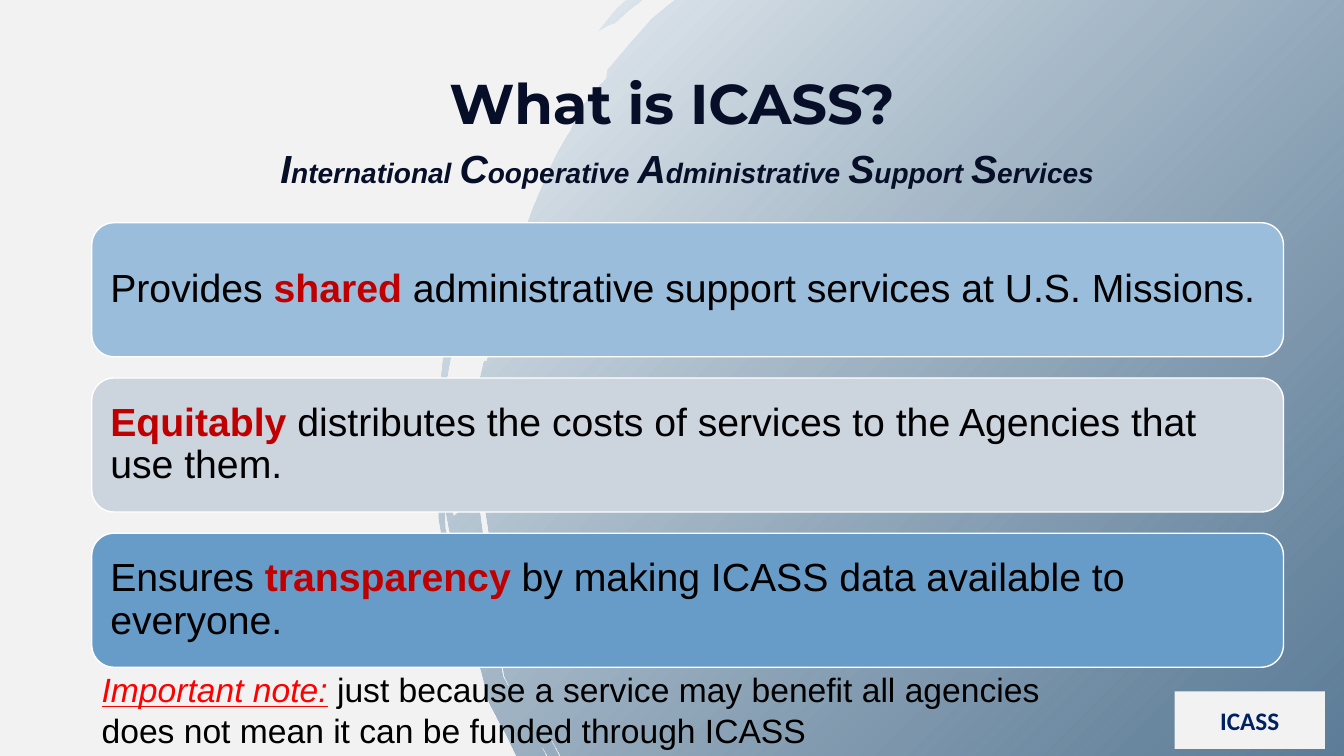
from dataclasses import dataclass
from typing import NamedTuple

from pptx import Presentation
from pptx.dml.color import RGBColor
from pptx.enum import shapes, text
from pptx.oxml import ns, parse_xml
from pptx.util import Inches, Pt


@dataclass(frozen=True)
class Theme:
    background: str = "F2F2F2"
    brush_light: str = "F2F7FA"
    brush_dark: str = "2C567A"
    heading: str = "060E28"
    body: str = "000000"
    emphasis: str = "C00000"
    warning: str = "FF0000"
    badge: str = "002060"
    outline: str = "FFFFFF"
    title_font: str = "Montserrat"
    body_font: str = "Arial"
    badge_font: str = "Calibri"
    title_size: int = 40
    body_size: int = 28
    note_size: int = 24
    small_size: int = 20
    badge_size: int = 18


class Box(NamedTuple):
    left: float
    top: float
    width: float
    height: float


@dataclass(frozen=True)
class Span:
    """Words in one look; None keeps the look of the paragraph."""
    words: str
    color: str | None = None
    size: int | None = None
    bold: bool | None = None
    italic: bool | None = None
    underline: bool | None = None


@dataclass(frozen=True)
class Style:
    font: str
    size: int
    color: str
    bold: bool = False
    italic: bool = False
    align: text.PP_ALIGN = text.PP_ALIGN.CENTER
    line_spacing: float = 1.0


@dataclass(frozen=True)
class Purpose:
    """One panel: a sentence whose key word is emphasised."""
    fill: str
    before: str
    key: str
    after: str

    def spans(self) -> list[Span]:
        parts = [Span(self.before), Span(self.key, THEME.emphasis, bold=True), Span(self.after)]
        return [part for part in parts if part.words]


THEME = Theme()
TITLE = Style(THEME.title_font, THEME.title_size, THEME.heading, bold=True)
SUBTITLE = Style(THEME.body_font, THEME.small_size, THEME.heading, bold=True, italic=True)
PURPOSE = Style(THEME.body_font, THEME.body_size, THEME.body,
                align=text.PP_ALIGN.LEFT, line_spacing=0.9)
NOTE = Style(THEME.body_font, THEME.note_size, THEME.body, align=text.PP_ALIGN.LEFT)
BADGE = Style(THEME.badge_font, THEME.badge_size, THEME.badge, bold=True)

SLIDE_WIDTH, SLIDE_HEIGHT = 13.33, 7.5
TITLE_BOX = Box(3.94, 0.63, 5.45, 0.77)
SUBTITLE_BOX = Box(1.96, 1.38, 9.71, 0.84)
FIRST_PANEL = Box(0.91, 2.21, 11.82, 1.33)
PANEL_GAP = 0.21
PANEL_INSET = 0.12
NOTE_BOX = Box(0.91, 6.59, 11.82, 0.91)
BADGE_BOX = Box(11.65, 6.86, 1.49, 0.57)

ACRONYM = ["International ", "Cooperative ", "Administrative ", "Support ", "Services"]
PURPOSES = [
    Purpose("9ABDDB", "Provides ", "shared ", "administrative support services at U.S. Missions."),
    Purpose("CCD4DE", "", "Equitably ",
            "distributes the costs of services to the Agencies that use them."),
    Purpose("679CC8", "Ensures ", "transparency ", "by making ICASS data available to everyone."),
]
NOTE_LINES = [
    [Span("Important note:", THEME.warning, italic=True, underline=True),
     Span(" just because a service may benefit all agencies")],
    [Span("does not mean it can be funded through ICASS")],
]

# The ragged left edge of the brush stroke, from the top of the slide to the bottom
Points = list[tuple[float, float]]
UPPER_SWEEP: Points = [
    (6.69, 0), (6.46, 0.19), (6.24, 0.44), (6.02, 0.7), (6.01, 0.78), (5.87, 0.93),
    (5.73, 1.12), (5.65, 1.31), (5.53, 1.51), (5.43, 1.72), (5.33, 1.95), (5.15, 2.43),
    (5.04, 2.8), (4.91, 3.3), (4.86, 3.66), (4.91, 3.23), (4.83, 3.58), (4.8, 3.58),
    (4.71, 3.97), (4.59, 4.17), (4.58, 4.32), (4.62, 4.65), (4.64, 4.99), (4.5, 5.12),
]
OUTER_BRISTLES: Points = [
    (4.46, 4.6), (4.47, 4), (4.43, 3.85), (4.39, 4.13), (4.42, 5.07), (4.52, 5.6),
    (4.51, 5.63), (4.42, 5.24), (4.38, 4.12), (4.42, 3.85), (4.51, 3.36), (4.69, 2.66),
    (4.86, 2.2), (4.79, 2.31), (4.61, 2.66), (4.5, 2.91), (4.42, 3.33), (4.37, 3.77),
    (4.3, 4.4), (4.35, 4.79), (4.35, 5.14), (4.46, 5.82), (4.56, 6.01), (4.53, 5.75),
    (4.58, 6.02), (4.68, 6.4), (4.77, 6.65), (4.85, 6.97), (5.03, 7.31), (5.12, 7.5),
]
LOWER_SWEEP: Points = [
    (5.42, 7.5), (5.24, 7.16), (4.99, 6.71), (4.93, 6.37), (4.8, 5.99), (4.7, 5.46),
    (4.68, 5.21), (4.82, 6), (4.95, 6.38), (5, 6.71), (5.24, 7.16), (5.43, 7.5),
    (5.55, 7.5), (5.17, 6.78), (4.93, 5.99), (4.82, 5.51), (4.73, 4.83), (4.75, 4.65),
    (4.85, 5.3), (4.97, 5.92), (4.87, 5.71), (4.79, 5.29), (4.94, 5.99), (5.17, 6.78),
    (5.56, 7.5),
]
RIGHT_SIDE: Points = [(SLIDE_WIDTH, SLIDE_HEIGHT), (SLIDE_WIDTH, 0)]
STRAY_BRISTLE: Points = [
    (6.38, 0), (6.21, 0), (6.12, 0.08), (6.02, 0.2), (5.92, 0.33), (6.04, 0.26),
    (6.1, 0.24), (6.23, 0.12), (6.32, 0.05),
]
BRUSH_OUTLINES = [UPPER_SWEEP + OUTER_BRISTLES + LOWER_SWEEP + RIGHT_SIDE, STRAY_BRISTLE]


def color_of(code: str) -> RGBColor:
    return RGBColor.from_string(code)


def fill_with_glow(shape) -> None:
    """Shade a shape from light at its top left to a see-through dark."""
    shape.fill.background()
    no_fill = shape.element.spPr.find(ns.qn("a:noFill"))
    no_fill.getparent().replace(no_fill, parse_xml(
        f'<a:gradFill {ns.nsdecls("a")} rotWithShape="1"><a:gsLst>'
        f'<a:gs pos="0"><a:srgbClr val="{THEME.brush_light}"/></a:gs>'
        f'<a:gs pos="100000"><a:srgbClr val="{THEME.brush_dark}">'
        '<a:alpha val="75000"/></a:srgbClr></a:gs></a:gsLst>'
        '<a:path path="circle"><a:fillToRect r="100000" b="100000"/></a:path></a:gradFill>'))


def draw_brush(slide) -> None:
    """Draw all outlines as one shape; EMU points, since a builder rounds to whole units."""
    body, *strays = [[(Inches(x), Inches(y)) for x, y in outline] for outline in BRUSH_OUTLINES]
    builder = slide.shapes.build_freeform(*body[0])
    builder.add_line_segments(body[1:])
    for stray in strays:
        builder.move_to(*stray[0])
        builder.add_line_segments(stray[1:])
    brush = builder.convert_to_shape()
    brush.shadow.inherit = False
    brush.line.fill.background()
    fill_with_glow(brush)


def write(frame, lines: list[list[Span]], style: Style) -> None:
    """Fill a text frame, one paragraph per line; spans override the style."""
    frame.word_wrap = True
    for index, spans in enumerate(lines):
        paragraph = frame.add_paragraph() if index else frame.paragraphs[0]
        paragraph.alignment = style.align
        paragraph.line_spacing = style.line_spacing
        apply_font(paragraph.font, style)
        paragraph.font.name = style.font
        for span in spans:
            run = paragraph.add_run()
            run.text = span.words
            apply_font(run.font, span)
            run.font.underline = span.underline


def apply_font(font, look: Style | Span) -> None:
    font.bold, font.italic = look.bold, look.italic
    if look.size:
        font.size = Pt(look.size)
    if look.color:
        font.color.rgb = color_of(look.color)


def add_text(slide, box: Box, lines: list[list[Span]], style: Style) -> None:
    write(slide.shapes.add_textbox(*map(Inches, box)).text_frame, lines, style)


def add_panel(slide, kind, box: Box, fill: str, spans: list[Span], style: Style):
    panel = slide.shapes.add_shape(kind, *map(Inches, box))
    panel.shadow.inherit = False
    panel.fill.solid()
    panel.fill.fore_color.rgb = color_of(fill)
    panel.line.fill.background()
    panel.text_frame.vertical_anchor = text.MSO_ANCHOR.MIDDLE
    write(panel.text_frame, [spans], style)
    return panel


def add_purposes(slide) -> None:
    for row, purpose in enumerate(PURPOSES):
        box = FIRST_PANEL._replace(top=FIRST_PANEL.top + row * (FIRST_PANEL.height + PANEL_GAP))
        panel = add_panel(slide, shapes.MSO_SHAPE.ROUNDED_RECTANGLE, box,
                          purpose.fill, purpose.spans(), PURPOSE)
        panel.line.color.rgb = color_of(THEME.outline)
        panel.line.width = Pt(1)
        panel.text_frame.margin_left = panel.text_frame.margin_right = Inches(PANEL_INSET)


def main() -> None:
    deck = Presentation()
    deck.slide_width, deck.slide_height = Inches(SLIDE_WIDTH), Inches(SLIDE_HEIGHT)
    slide = deck.slides.add_slide(deck.slide_layouts[6])
    slide.background.fill.solid()
    slide.background.fill.fore_color.rgb = color_of(THEME.background)

    draw_brush(slide)
    initials = [span for word in ACRONYM
                for span in (Span(word[0], size=THEME.body_size), Span(word[1:]))]
    add_text(slide, SUBTITLE_BOX, [initials], SUBTITLE)
    add_purposes(slide)
    add_text(slide, TITLE_BOX, [[Span("What is ICASS?")]], TITLE)
    add_text(slide, NOTE_BOX, NOTE_LINES, NOTE)
    add_panel(slide, shapes.MSO_SHAPE.RECTANGLE, BADGE_BOX,
              THEME.background, [Span("ICASS")], BADGE)
    deck.save("out.pptx")


if __name__ == "__main__":
    main()
